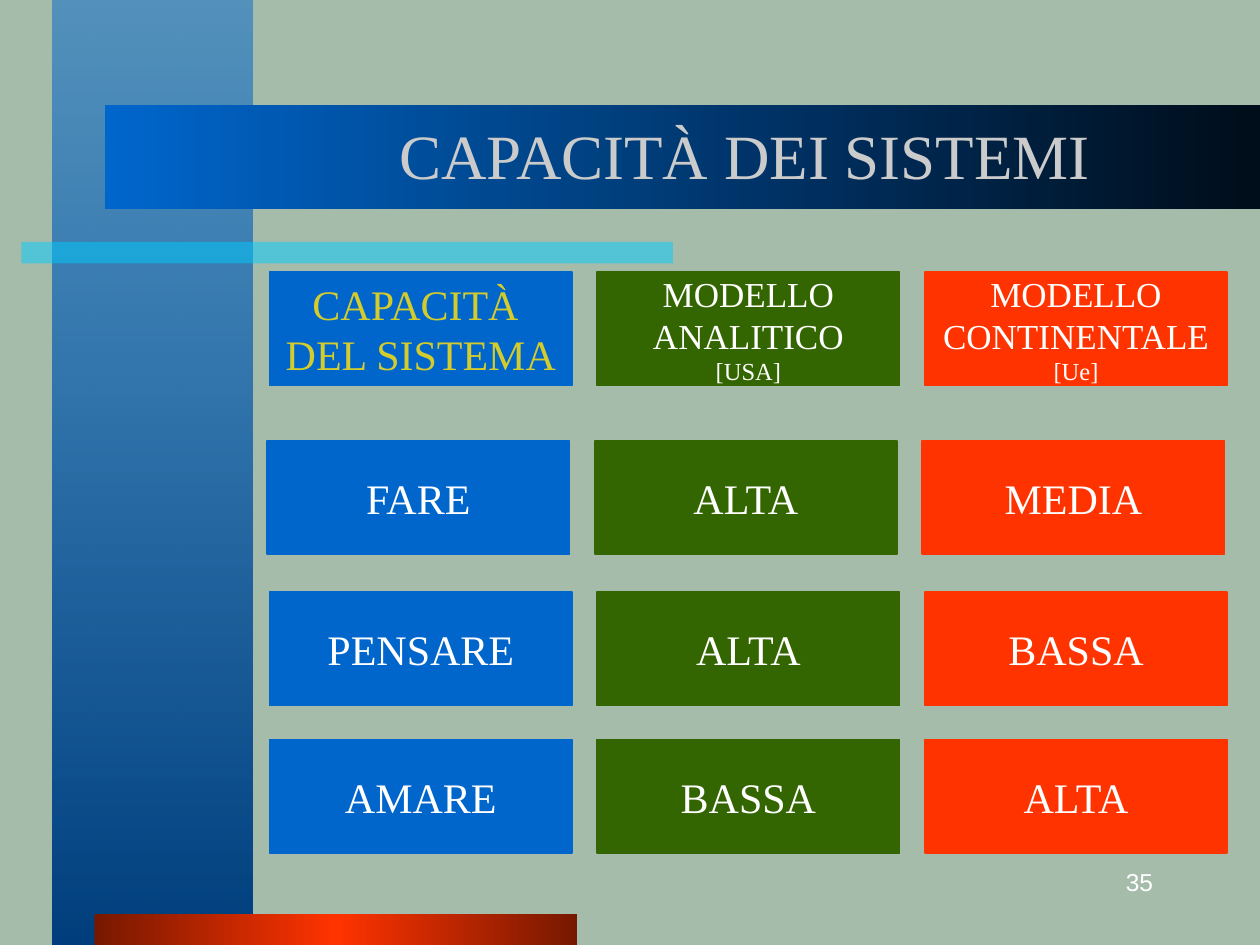
import pptx
import pptx.dml.color
import pptx.enum.shapes
import pptx.enum.text
import pptx.oxml
import pptx.oxml.ns
import pptx.util
from lxml import etree

Inches = pptx.util.Inches
Pt = pptx.util.Pt
qn = pptx.oxml.ns.qn
ALIGN = pptx.enum.text.PP_ALIGN
SERIF = "Times New Roman"
WHITE = "FFFFFF"
BLUE, GREEN, RED = "0066CC", "336600", "FF3300"

COLUMNS = [BLUE, GREEN, RED]
CELL_W, CELL_H, COLUMN_STEP = 2.4, 0.9, 2.6
HEADERS = [
    ([("CAPACITÀ ", 24), ("DEL SISTEMA", 24)], "D4CC2C"),
    ([("MODELLO", 20), ("ANALITICO", 20), ("[USA]", 14)], WHITE),
    ([("MODELLO", 20), ("CONTINENTALE", 20), ("[Ue]", 14)], WHITE),
]
# left edge, top edge, labels
ROWS = [
    (2.12, 3.5, ["FARE", "ALTA", "MEDIA"]),
    (2.14, 4.7, ["PENSARE", "ALTA", "BASSA"]),
    (2.14, 5.87, ["AMARE", "BASSA", "ALTA"]),
]


def rgb(color):
    return pptx.dml.color.RGBColor.from_string(color)


def add_rect(slide, left, top, width, height, color):
    s = slide.shapes.add_shape(
        pptx.enum.shapes.MSO_SHAPE.RECTANGLE,
        Inches(left), Inches(top), Inches(width), Inches(height))
    s.shadow.inherit = False
    s.fill.solid()
    s.fill.fore_color.rgb = rgb(color)
    s.line.fill.background()
    return s


def set_alpha(clr, percent):
    etree.SubElement(clr, qn("a:alpha")).set("val", str(percent * 1000))


def set_gradient(s, stops, angle):
    """Replace the solid fill by stops of (position, colour, opacity) in percent."""
    grad = etree.Element(qn("a:gradFill"), rotWithShape="1")
    stop_list = etree.SubElement(grad, qn("a:gsLst"))
    for position, color, opacity in stops:
        gs = etree.SubElement(stop_list, qn("a:gs"), pos=str(position * 1000))
        clr = etree.SubElement(gs, qn("a:srgbClr"), val=color)
        if opacity < 100:
            set_alpha(clr, opacity)
    etree.SubElement(grad, qn("a:lin"), ang=str(angle * 60000), scaled="0")
    solid = s._element.spPr.find(qn("a:solidFill"))
    solid.getparent().replace(solid, grad)


def write_lines(s, lines, color, font=SERIF, align=ALIGN.CENTER, wrap=False):
    tf = s.text_frame
    tf.word_wrap = wrap
    tf.vertical_anchor = pptx.enum.text.MSO_ANCHOR.MIDDLE
    for i, (text, size) in enumerate(lines):
        p = tf.add_paragraph() if i else tf.paragraphs[0]
        p.alignment = align
        r = p.add_run()
        r.text = text
        r.font.size = Pt(size)
        r.font.name = font
        r.font.color.rgb = rgb(color)


def add_text(slide, left, top, width, height, text, size, color, **options):
    s = slide.shapes.add_textbox(
        Inches(left), Inches(top), Inches(width), Inches(height))
    write_lines(s, [(text, size)], color, **options)


def add_cell(slide, left, top, fill, lines, color):
    s = add_rect(slide, left, top, CELL_W, CELL_H, fill)
    s.line.color.rgb = rgb(fill)
    s.line.width = Pt(1)
    write_lines(s, lines, color)


def add_decoration(slide):
    side_band = add_rect(slide, 0.42, 0, 1.58, 7.5, BLUE)
    set_gradient(side_band, [(0, BLUE, 50), (100, "003E7D", 100)], 90)
    stripe = add_rect(slide, 0.17, 1.92, 5.17, 0.17, "00CCFF")
    set_alpha(stripe._element.spPr.find(qn("a:solidFill"))[0], 50)
    foot_bar = add_rect(slide, 0.75, 7.25, 3.83, 0.25, RED)
    set_gradient(foot_bar,
                 [(0, "761800", 100), (50, RED, 100), (100, "761800", 100)], 0)
    title_bar = add_rect(slide, 0.83, 0.83, 9.17, 0.83, BLUE)
    set_gradient(title_bar, [(0, BLUE, 100), (100, "000D1A", 100)], 0)


def add_grid(slide):
    for i, (fill, (lines, color)) in enumerate(zip(COLUMNS, HEADERS)):
        add_cell(slide, 2.14 + i * COLUMN_STEP, 2.16, fill, lines, color)
    for left, top, labels in ROWS:
        for i, (fill, label) in enumerate(zip(COLUMNS, labels)):
            add_cell(slide, left + i * COLUMN_STEP, top, fill,
                     [(label, 24)], WHITE)


def main():
    prs = pptx.Presentation()
    prs.slide_width, prs.slide_height = Inches(10), Inches(7.5)
    slide = prs.slides.add_slide(prs.slide_layouts[6])
    slide.background.fill.solid()
    slide.background.fill.fore_color.rgb = rgb("A6BCAB")
    add_decoration(slide)
    add_text(slide, 7.17, 6.75, 2.08, 0.5, "35", 14, WHITE,
             font="Arial", align=ALIGN.RIGHT, wrap=True)
    add_text(slide, 2.65, 0.83, 6.52, 0.79, "CAPACITÀ DEI SISTEMI", 36,
             "CBCBCB", wrap=True)
    add_grid(slide)
    prs.save("out.pptx")


if __name__ == "__main__":
    main()
